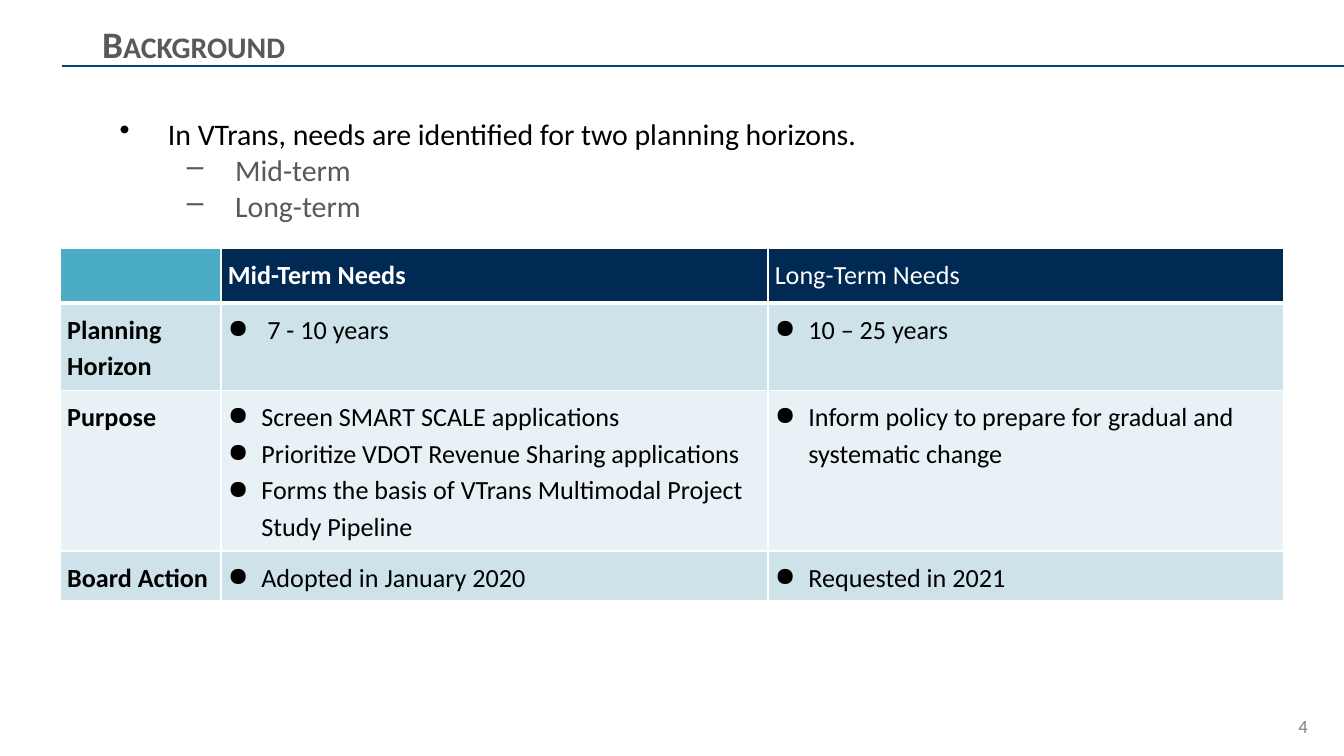
from dataclasses import dataclass
from typing import Optional

from lxml.etree import SubElement
from pptx import Presentation
from pptx.dml.color import RGBColor
from pptx.enum.shapes import MSO_CONNECTOR as Connector
from pptx.enum.text import MSO_ANCHOR as Anchor, PP_ALIGN as Align
from pptx.oxml import parse_xml
from pptx.oxml.ns import nsdecls, qn
from pptx.util import Emu, Inches, Pt

UNIT = Inches(0.1)  # one grid step; the page is 100 columns by 56.25 rows
COLUMNS, ROWS = 100, 56.25
FONT = "Calibri"
COLORS = {
    "white": "FFFFFF", "black": "000000", "gray": "595959", "pale_gray": "7F7F7F",
    "rule": "01467A", "navy": "002954", "teal": "4BACC6",
    "band_dark": "CEE2EA", "band_light": "E8F1F5",
}


@dataclass(frozen=True)
class Style:
    size: float
    color: str = "black"
    bold: bool = False
    align: Align = Align.LEFT
    spacing: float = 1.0


@dataclass(frozen=True)
class Bullet:
    char: str
    left: float
    hanging: float
    level: int = 0


@dataclass(frozen=True)
class Area:
    column: float
    row: float
    width: float
    height: float

    def lengths(self) -> list[Emu]:
        return [grid(n) for n in (self.column, self.row, self.width, self.height)]


@dataclass(frozen=True)
class TableRow:
    height: float
    fill: str
    label: str
    mid_term: tuple[str, ...]
    long_term: tuple[str, ...]


DOT = Bullet("●", 2.5, 2.5)
CELL = Style(14, spacing=1.15)
LABEL = Style(14, bold=True, spacing=1.15)
COLUMN_WIDTHS = (11.95, 40.7, 38.35)
HEADER_HEIGHT = 4.05
HEADERS = (
    ("", "teal", LABEL),
    ("Mid-Term Needs", "navy", Style(14, "white", bold=True, spacing=1.15)),
    ("Long-Term Needs", "navy", Style(14, "white", spacing=1.15)),
)
TABLE_ROWS = (
    TableRow(6.5, "band_dark", "Planning Horizon", (" 7 - 10 years",), ("10 – 25 years",)),
    TableRow(11.95, "band_light", "Purpose",
             ("Screen SMART SCALE applications",
              "Prioritize VDOT Revenue Sharing applications",
              "Forms the basis of VTrans Multimodal Project Study Pipeline"),
             ("Inform policy to prepare for gradual and systematic change",)),
    TableRow(3.7, "band_dark", "Board Action",
             ("Adopted in January 2020",), ("Requested in 2021",)),
)
MAIN_POINT = Bullet("•", 5, 3.6)
SUB_POINT = Bullet("–", 10, 3.6, level=1)
POINTS = (
    ("In VTrans, needs are identified for two planning horizons.", MAIN_POINT, "black"),
    ("Mid-term", SUB_POINT, "gray"),
    ("Long-term", SUB_POINT, "gray"),
)


def grid(steps: float) -> Emu:
    return Emu(round(steps * UNIT))


def rgb(name: str) -> RGBColor:
    return RGBColor.from_string(COLORS[name])


def add_bullet(para, bullet: Bullet, color: str) -> None:
    para.level = bullet.level
    props = para._p.get_or_add_pPr()
    props.set("marL", str(grid(bullet.left)))
    props.set("indent", str(-grid(bullet.hanging)))
    bullet_color = SubElement(props, qn("a:buClr"))
    SubElement(bullet_color, qn("a:srgbClr"), val=COLORS[color])
    SubElement(props, qn("a:buChar"), char=bullet.char)


def write(frame, index: int, text: str, style: Style, bullet: Optional[Bullet] = None):
    para = frame.add_paragraph() if index else frame.paragraphs[0]
    if bullet:
        add_bullet(para, bullet, style.color)
    para.alignment = style.align
    para.line_spacing = style.spacing
    font = para.font
    font.name, font.size, font.bold = FONT, Pt(style.size), style.bold
    font.color.rgb = rgb(style.color)
    span = para.add_run()
    span.text = text
    span.font.size = Pt(style.size)  # bullets take their size from the first run
    return span


def add_box(page, area: Area, anchor: Anchor, side: float, edge: float):
    frame = page.shapes.add_textbox(*area.lengths()).text_frame
    frame.word_wrap = True
    frame.vertical_anchor = anchor
    frame.margin_left = frame.margin_right = grid(side)
    frame.margin_top = frame.margin_bottom = grid(edge)
    return frame


def format_cell(cell, fill: str, bottom_width: float = 1) -> None:
    """Set the margins, fill and white borders of a cell."""
    cell.margin_left = cell.margin_right = cell.margin_top = cell.margin_bottom = grid(0.5)
    cell.fill.solid()
    cell.fill.fore_color.rgb = rgb(fill)
    props = cell._tc.get_or_add_tcPr()
    widths = {"lnL": 1, "lnR": 1, "lnT": 1, "lnB": bottom_width}
    for position, (side, width) in enumerate(widths.items()):
        props.insert(position, parse_xml(
            f'<a:{side} {nsdecls("a")} w="{int(Pt(width))}"><a:solidFill>'
            f'<a:srgbClr val="{COLORS["white"]}"/></a:solidFill></a:{side}>'))


def add_needs_table(page, column: float, row: float) -> None:
    heights = (HEADER_HEIGHT, *(item.height for item in TABLE_ROWS))
    area = Area(column, row, sum(COLUMN_WIDTHS), sum(heights))
    table = page.shapes.add_table(len(heights), len(COLUMN_WIDTHS), *area.lengths()).table
    table.first_row = table.horz_banding = False
    for table_column, width in zip(table.columns, COLUMN_WIDTHS):
        table_column.width = grid(width)
    for table_row, height in zip(table.rows, heights):
        table_row.height = grid(height)
    for index, (text, fill, style) in enumerate(HEADERS):
        cell = table.cell(0, index)
        format_cell(cell, fill, bottom_width=3)
        if text:
            write(cell.text_frame, 0, text, style)
    for row_index, item in enumerate(TABLE_ROWS, start=1):
        contents = (((item.label,), LABEL, None),
                    (item.mid_term, CELL, DOT),
                    (item.long_term, CELL, DOT))
        for column_index, (lines, style, bullet) in enumerate(contents):
            cell = table.cell(row_index, column_index)
            format_cell(cell, item.fill)
            for line_index, line in enumerate(lines):
                write(cell.text_frame, line_index, line, style, bullet)


def add_title_rule(page, column: float, row: float) -> None:
    rule = page.shapes.add_connector(
        Connector.STRAIGHT, grid(column), grid(row), grid(COLUMNS), grid(row))
    rule.line.color.rgb = rgb("rule")
    rule.line.width = Pt(0.75)
    SubElement(rule._element.spPr, qn("a:effectLst"))


def main() -> None:
    deck = Presentation()
    deck.slide_width, deck.slide_height = grid(COLUMNS), grid(ROWS)
    page = deck.slides.add_slide(deck.slide_layouts[6])

    add_title_rule(page, 4.6, 4.9)
    title = add_box(page, Area(6.9, 1.5, 86.2, 3.5), Anchor.MIDDLE, 0.7, 0.4)
    span = write(title, 0, "Background", Style(20, "gray", bold=True))
    span._r.get_or_add_rPr().set("cap", "small")

    add_needs_table(page, 4.5, 18.5)

    number = add_box(page, Area(75, 52.5, 23.3, 3), Anchor.MIDDLE, 1, 0.5)
    write(number, 0, "4", Style(10, "pale_gray", align=Align.RIGHT))

    points = add_box(page, Area(6.8, 8.2, 88.3, 10.2), Anchor.TOP, 0.7, 0.4)
    for index, (text, bullet, color) in enumerate(POINTS):
        write(points, index, text, Style(16, color), bullet)

    deck.save("out.pptx")


if __name__ == "__main__":
    main()
